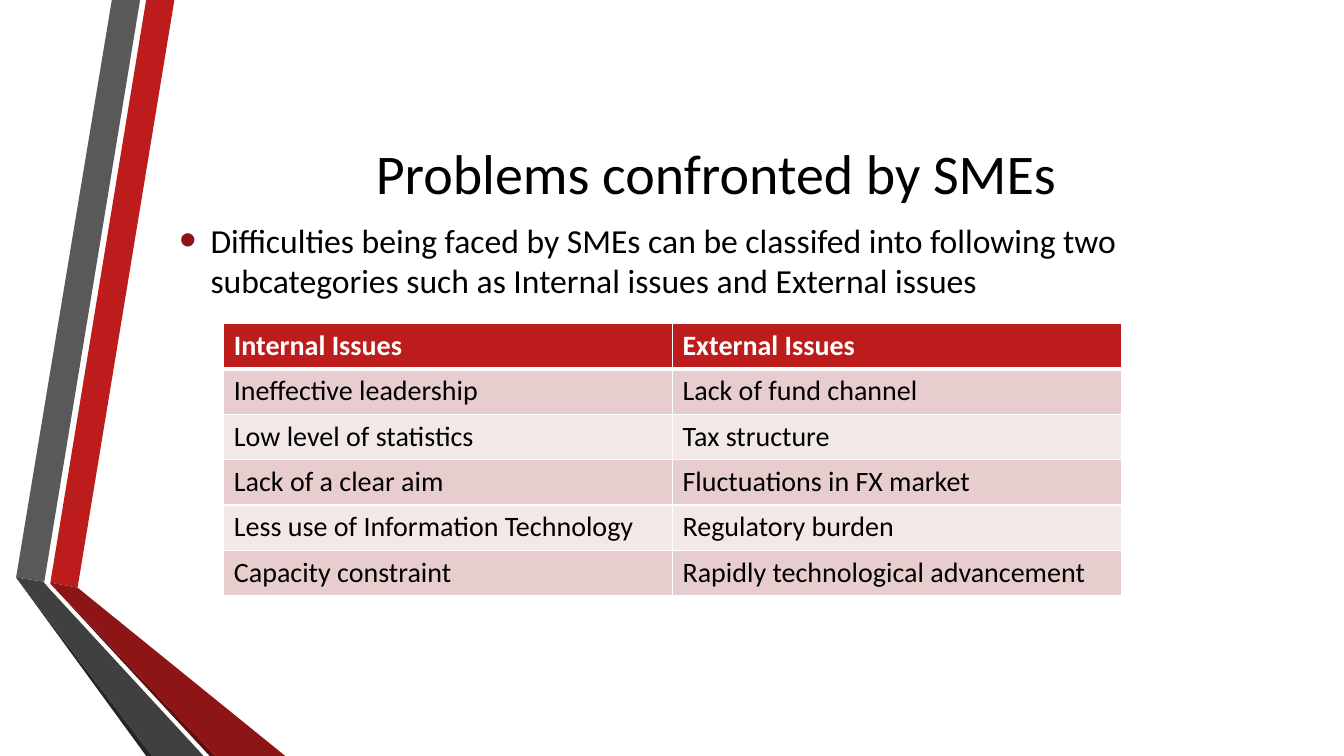
from lxml.etree import SubElement
from pptx import Presentation
from pptx.dml.color import RGBColor
from pptx.enum.text import MSO_ANCHOR, PP_ALIGN
from pptx.oxml.ns import qn
from pptx.util import Inches, Pt

BLACK = RGBColor(0x00, 0x00, 0x00)
WHITE = RGBColor(0xFF, 0xFF, 0xFF)
RED = RGBColor(0xBC, 0x1C, 0x1C)
DARK_RED = RGBColor(0x8D, 0x15, 0x15)
DEEP_RED = RGBColor(0x5E, 0x0E, 0x0E)
GREY = RGBColor(0x59, 0x59, 0x59)
DARK_GREY = RGBColor(0x40, 0x40, 0x40)
DEEP_GREY = RGBColor(0x26, 0x26, 0x26)
PINK = RGBColor(0xE7, 0xCD, 0xCD)
PALE_PINK = RGBColor(0xF3, 0xE8, 0xE8)

RIBBONS = [
    (RED, [(0.5, 5.78), (0.77, 5.83), (1.73, 0), (1.45, 0)]),
    (GREY, [(1.39, 0), (1.11, 0), (0.16, 5.73), (0.44, 5.77)]),
    (DEEP_GREY, [(0.16, 5.73), (1.45, 7.5), (1.51, 7.5)]),
    (DEEP_RED, [(0.5, 5.79), (2.08, 7.5), (2.14, 7.5)]),
    (DARK_RED, [(0.5, 5.79), (2.14, 7.5), (2.83, 7.5), (0.77, 5.83), (0.5, 5.78)]),
    (DARK_GREY, [(2.02, 7.5), (0.48, 5.83), (0.43, 5.77), (0.16, 5.73), (1.51, 7.5)]),
]

ISSUES = [
    ("Internal Issues", "External Issues"),
    ("Ineffective leadership", "Lack of fund channel"),
    ("Low level of statistics", "Tax structure"),
    ("Lack of a clear aim", "Fluctuations in FX market"),
    ("Less use of Information Technology", "Regulatory burden"),
    ("Capacity constraint", "Rapidly technological advancement"),
]


class SlideBuilder:
    font = "Calibri"

    def __init__(self, slide):
        self.slide = slide

    def add_run(self, paragraph, text, size, color=BLACK, bold=False):
        run = paragraph.add_run()
        run.text = text
        run.font.name = self.font
        run.font.size = Pt(size)
        run.font.bold = bold
        run.font.color.rgb = color

    def ribbon(self, color, points):
        start, *others = [(Inches(x), Inches(y)) for x, y in points]
        builder = self.slide.shapes.build_freeform(*start)
        builder.add_line_segments(others, close=True)
        shape = builder.convert_to_shape()
        shape.shadow.inherit = False
        shape.fill.solid()
        shape.fill.fore_color.rgb = color
        shape.line.fill.background()

    def text(self, left, top, width, height, text, size):
        """Add a vertically centred text box and return its paragraph."""
        box = self.slide.shapes.add_textbox(
            Inches(left), Inches(top), Inches(width), Inches(height))
        frame = box.text_frame
        frame.word_wrap = True
        frame.vertical_anchor = MSO_ANCHOR.MIDDLE
        paragraph = frame.paragraphs[0]
        self.add_run(paragraph, text, size)
        return paragraph

    def bullet(self, paragraph, color, percent, indent):
        paragraph.space_before = Pt(4.8)
        paragraph.space_after = Pt(6)
        properties = paragraph._p.get_or_add_pPr()
        properties.set("marL", str(Inches(indent)))
        properties.set("indent", str(-Inches(indent)))
        bullet_color = SubElement(properties, qn("a:buClr"))
        SubElement(bullet_color, qn("a:srgbClr"), val=str(color))
        SubElement(properties, qn("a:buSzPct"), val=str(percent * 1000))
        SubElement(properties, qn("a:buFont"), typeface="Arial")
        SubElement(properties, qn("a:buChar"), char="•")

    def borders(self, cell, **widths):
        """Draw white cell borders; fill must be set afterwards."""
        properties = cell._tc.get_or_add_tcPr()
        for side, width in widths.items():
            line = SubElement(properties, qn(f"a:ln{side}"), w=str(Pt(width)))
            fill = SubElement(line, qn("a:solidFill"))
            SubElement(fill, qn("a:srgbClr"), val=str(WHITE))

    def table(self, left, top, width, row_height, rows, size):
        table = self.slide.shapes.add_table(
            len(rows), len(rows[0]), Inches(left), Inches(top),
            Inches(width), Inches(row_height * len(rows))).table
        for row_index, texts in enumerate(rows):
            table.rows[row_index].height = Inches(row_height)
            header = row_index == 0
            band = RED if header else PINK if row_index % 2 else PALE_PINK
            for column_index, text in enumerate(texts):
                cell = table.cell(row_index, column_index)
                self.borders(cell, L=1, R=1, T=3 if row_index == 1 else 1,
                             B=3 if header else 1)
                cell.fill.solid()
                cell.fill.fore_color.rgb = band
                self.add_run(cell.text_frame.paragraphs[0], text, size,
                             WHITE if header else BLACK, header)


def main():
    presentation = Presentation()
    presentation.slide_width = Inches(13.33)
    presentation.slide_height = Inches(7.5)
    builder = SlideBuilder(
        presentation.slides.add_slide(presentation.slide_layouts[6]))

    for color, points in RIBBONS:
        builder.ribbon(color, points)

    title = builder.text(1.62, 0.75, 10.96, 1.92, "Problems confronted by SMEs", 40)
    title.alignment = PP_ALIGN.CENTER
    summary = builder.text(
        1.68, 2.09, 10.36, 0.98,
        "Difficulties being faced by SMEs can be classifed into following two "
        "subcategories such as Internal issues and External issues", 24)
    builder.bullet(summary, DARK_RED, 145, 0.31)
    builder.table(2.22, 3.21, 8.9, 0.45, ISSUES, 20)

    presentation.save("out.pptx")


if __name__ == "__main__":
    main()
